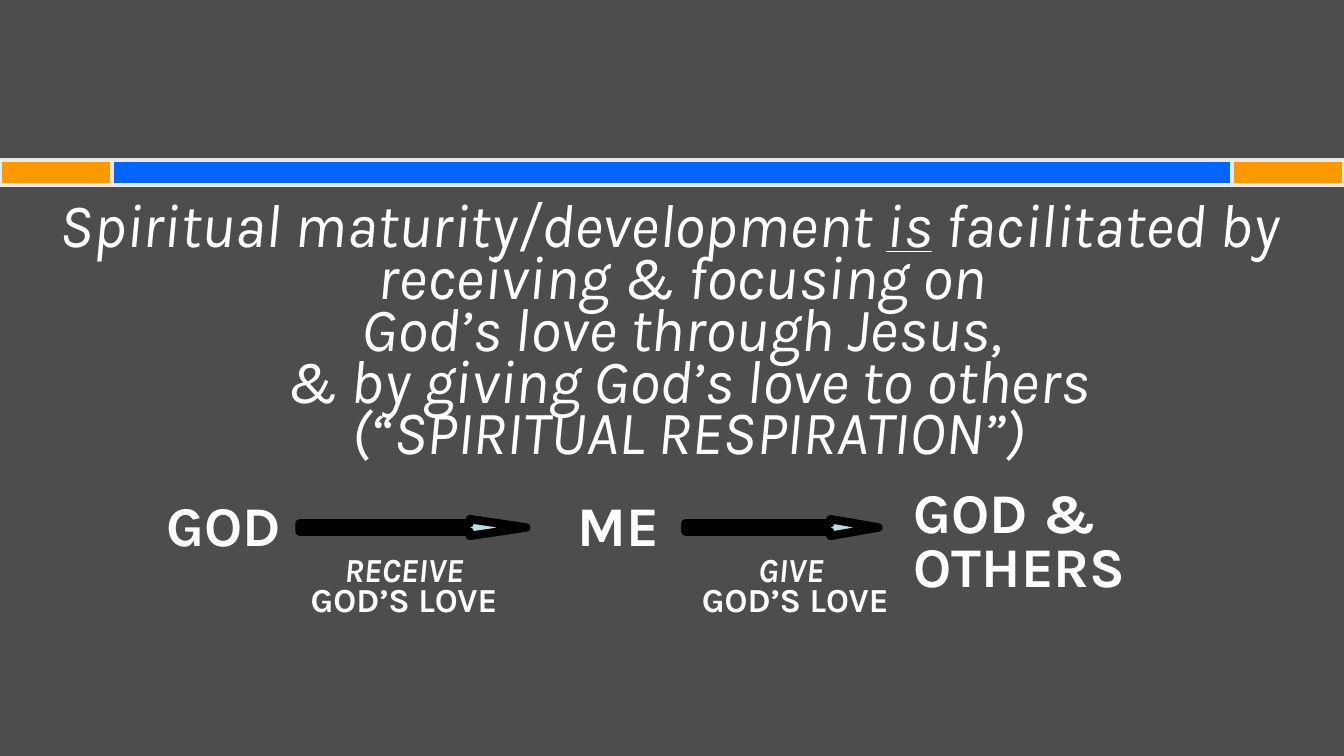
from pptx import Presentation
from pptx.dml.color import RGBColor
from pptx.enum.shapes import MSO_SHAPE
from pptx.enum.text import PP_ALIGN
from pptx.util import Pt

HUES = {"back": "4D4D4D", "blue": "0066FF", "gold": "FF9900", "rim": "EAEAEA",
        "ice": "BBE0E3", "black": "000000", "white": "FFFFFF"}
WIDE, HIGH = 960, 540


class Deck:
    font = "Karla"

    def __init__(self):
        self.file = Presentation()
        self.file.slide_width, self.file.slide_height = Pt(WIDE), Pt(HIGH)
        self.slide = self.file.slides.add_slide(self.file.slide_layouts[6])
        fill = self.slide.background.fill
        fill.solid()
        fill.fore_color.rgb = self.hue("back")

    def hue(self, name):
        return RGBColor.from_string(HUES[name])

    def shape(self, kind, box, fill, line, width):
        item = self.slide.shapes.add_shape(kind, *map(Pt, box))
        item.shadow.inherit = False
        item.fill.solid()
        item.fill.fore_color.rgb = self.hue(fill)
        item.line.color.rgb = self.hue(line)
        item.line.width = Pt(width)
        return item

    def arrow(self, left, width, head):
        item = self.shape(MSO_SHAPE.RIGHT_ARROW, (left, 370.8, width, 12),
                          "ice", "black", 6)
        item.adjustments[1] = head

    def text(self, box, parts, size, align=PP_ALIGN.CENTER, space=1.0, hang=0):
        """Each part is its words and the letters of its styles: b, i, u."""
        frame = self.slide.shapes.add_textbox(*map(Pt, box)).text_frame
        frame.word_wrap = True
        para = frame.paragraphs[0]
        para.alignment, para.line_spacing = align, space
        if hang:
            props = para._p.get_or_add_pPr()
            props.set("marL", str(Pt(hang)))
            props.set("indent", str(-Pt(hang)))
        for words, style in parts:
            for row, line in enumerate(words.split("\n")):
                if row:
                    para.add_line_break()
                if line:
                    run = para.add_run()
                    run.text = line
                    font = run.font
                    font.name, font.size = self.font, Pt(size)
                    font.color.rgb = self.hue("white")
                    font.bold, font.italic = "b" in style, "i" in style
                    font.underline = "u" in style


def main():
    deck = Deck()

    # Banner: blue bar with a gold block at each end
    end = 80
    for left, width, fill in ((0, WIDE, "blue"), (0, end, "gold"),
                              (WIDE - end, end, "gold")):
        deck.shape(MSO_SHAPE.RECTANGLE, (left, 114, width, 18), fill, "rim", 3)

    # Main statement
    deck.text((14.4, 144, 928, 384), [
        ("Spiritual maturity/development ", "i"),
        ("is", "iu"),
        (" facilitated by receiving & focusing on \n"
         "God’s love through Jesus, \n"
         "& by giving God’s love to others\n"
         "(“SPIRITUAL RESPIRATION”)", "i"),
    ], 44, space=0.7, hang=27)

    # Flow of love: who
    for left, width, high, name, align, space in (
            (111.6, 120, 55.4, "GOD", PP_ALIGN.LEFT, 1.0),
            (381.6, 120, 55.4, "ME", PP_ALIGN.CENTER, 1.0),
            (645.6, 186, 73.4, "GOD & OTHERS", PP_ALIGN.LEFT, 0.8)):
        deck.text((left, 347, width, high), [(name, "b")], 40, align, space)

    # Flow of love: arrows and their captions
    deck.arrow(214, 162, 3.375)
    deck.arrow(489.6, 138, 2.875)
    for left, verb in ((201.6, "RECEIVE"), (478, "GIVE\n")):
        deck.text((left, 395.3, 174, 51), [(verb, "bi"), (" GOD’S LOVE", "b")],
                  24, space=0.75)

    deck.file.save("out.pptx")


if __name__ == "__main__":
    main()
